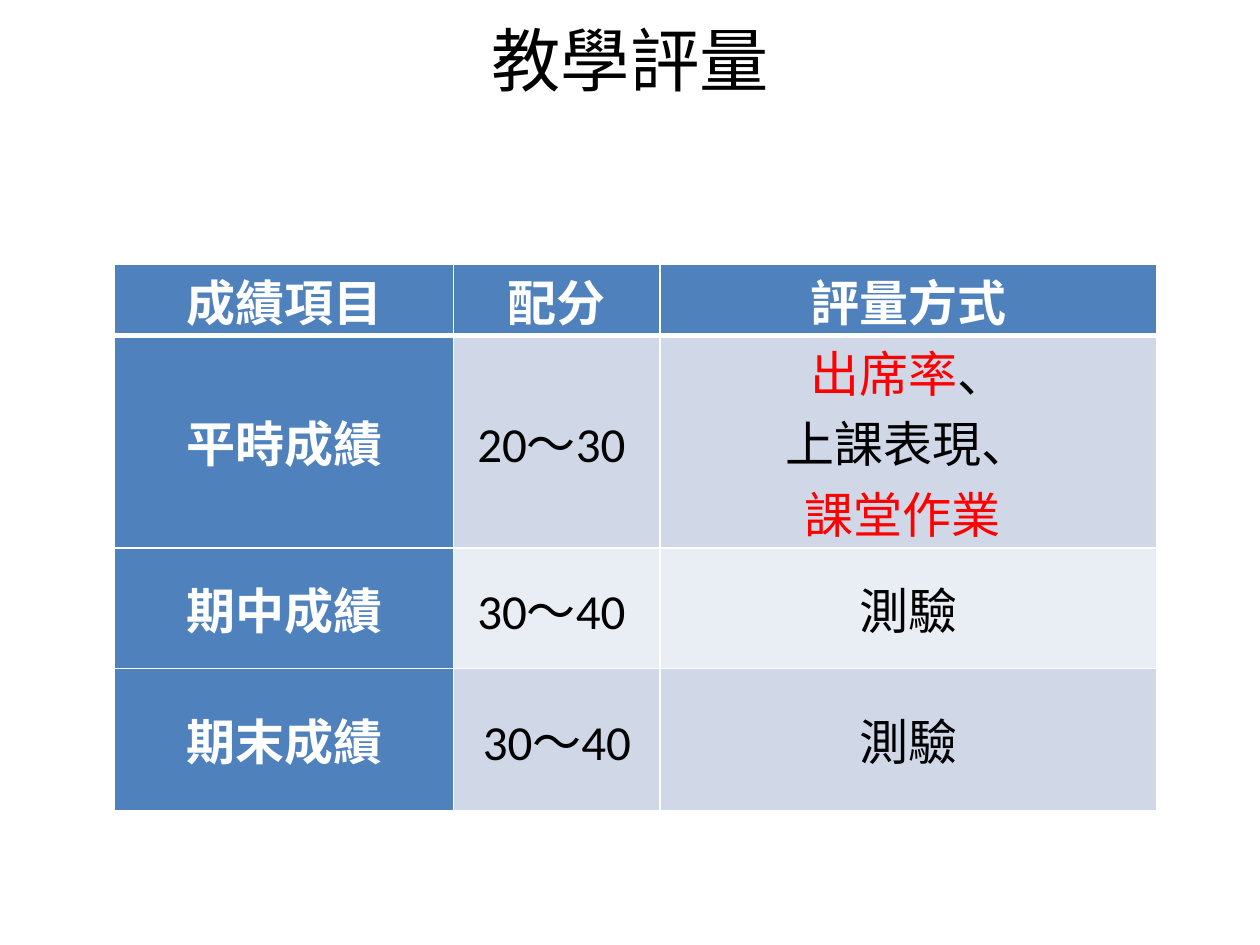
from dataclasses import dataclass

from lxml.etree import SubElement
from pptx import Presentation
from pptx.dml.color import RGBColor as Color
from pptx.enum.text import MSO_ANCHOR as Anchor, MSO_AUTO_SIZE as AutoSize, PP_ALIGN as Align
from pptx.oxml.ns import qn
from pptx.util import Pt


@dataclass(frozen=True)
class Theme:
    title_font: str = "Noto Sans CJK SC"
    body_font: str = "Calibri"
    title_size: float = 39.6
    body_size: float = 28
    black: str = "000000"
    white: str = "FFFFFF"
    red: str = "FF0000"
    blue: str = "4F81BD"
    bands: tuple = ("D0D8E8", "E9EDF4")


theme = Theme()


def format_span(span, font, size, color, bold=False):
    span.font.name = font
    span.font.size = Pt(size)
    span.font.color.rgb = Color.from_string(color)
    span.font.bold = bold


def add_borders(cell, bottom_width):
    properties = cell._tc.get_or_add_tcPr()
    widths = {"a:lnL": 1, "a:lnR": 1, "a:lnT": 1, "a:lnB": bottom_width}
    for position, (tag, width) in enumerate(widths.items()):
        line = SubElement(properties, qn(tag), w=str(Pt(width)))
        SubElement(SubElement(line, qn("a:solidFill")), qn("a:srgbClr"), val=theme.white)
        properties.insert(position, line)


deck = Presentation()
deck.slide_width, deck.slide_height = Pt(720), Pt(540)
page = deck.slides.add_slide(deck.slide_layouts[5])

title = page.shapes.title
title.left, title.top, title.width, title.height = Pt(36), Pt(10), Pt(648), Pt(90)
frame = title.text_frame
frame.text = "教學評量"
frame.auto_size = AutoSize.NONE
frame.vertical_anchor = Anchor.TOP
frame.margin_top = 0
para = frame.paragraphs[0]
para.alignment = Align.CENTER
format_span(para.runs[0], theme.title_font, theme.title_size, theme.black)

tasks = [[("出席率", theme.red), ("、", theme.black)],
         [("上課表現、", theme.black)],
         [("課堂作業 ", theme.red)]]
exam = [[("測驗", theme.black)]]
headings = ["成績項目", "配分", "評量方式"]
grades = [("平時成績", "20～30 ", tasks),
          ("期中成績", "30～40 ", exam),
          ("期末成績", "30～40", exam)]
rows = [[[[(heading, theme.white)]] for heading in headings]]
for item, share, method in grades:
    rows.append([[[(item, theme.white)]], [[(share, theme.black)]], method])

column_widths = [193.7, 118, 283.7]
row_heights = [28, 80, 69, 81]
table = page.shapes.add_table(len(rows), len(headings), Pt(65.5), Pt(151.2),
                              Pt(sum(column_widths)), Pt(sum(row_heights))).table
for column, width in zip(table.columns, column_widths):
    column.width = Pt(width)
for row, height in zip(table.rows, row_heights):
    row.height = Pt(height)

for row_index, row in enumerate(rows):
    for column_index, lines in enumerate(row):
        cell = table.cell(row_index, column_index)
        is_heading = row_index == 0 or column_index == 0
        cell.fill.solid()
        fill = theme.blue if is_heading else theme.bands[(row_index - 1) % 2]
        cell.fill.fore_color.rgb = Color.from_string(fill)
        cell.vertical_anchor = Anchor.MIDDLE
        cell.margin_left = cell.margin_right = cell.margin_top = cell.margin_bottom = 0
        add_borders(cell, 3 if row_index == 0 else 1)
        for line_index, line in enumerate(lines):
            frame = cell.text_frame
            para = frame.add_paragraph() if line_index else frame.paragraphs[0]
            para.alignment = Align.CENTER
            for text, color in line:
                span = para.add_run()
                span.text = text
                format_span(span, theme.body_font, theme.body_size, color, is_heading)

deck.save("out.pptx")
